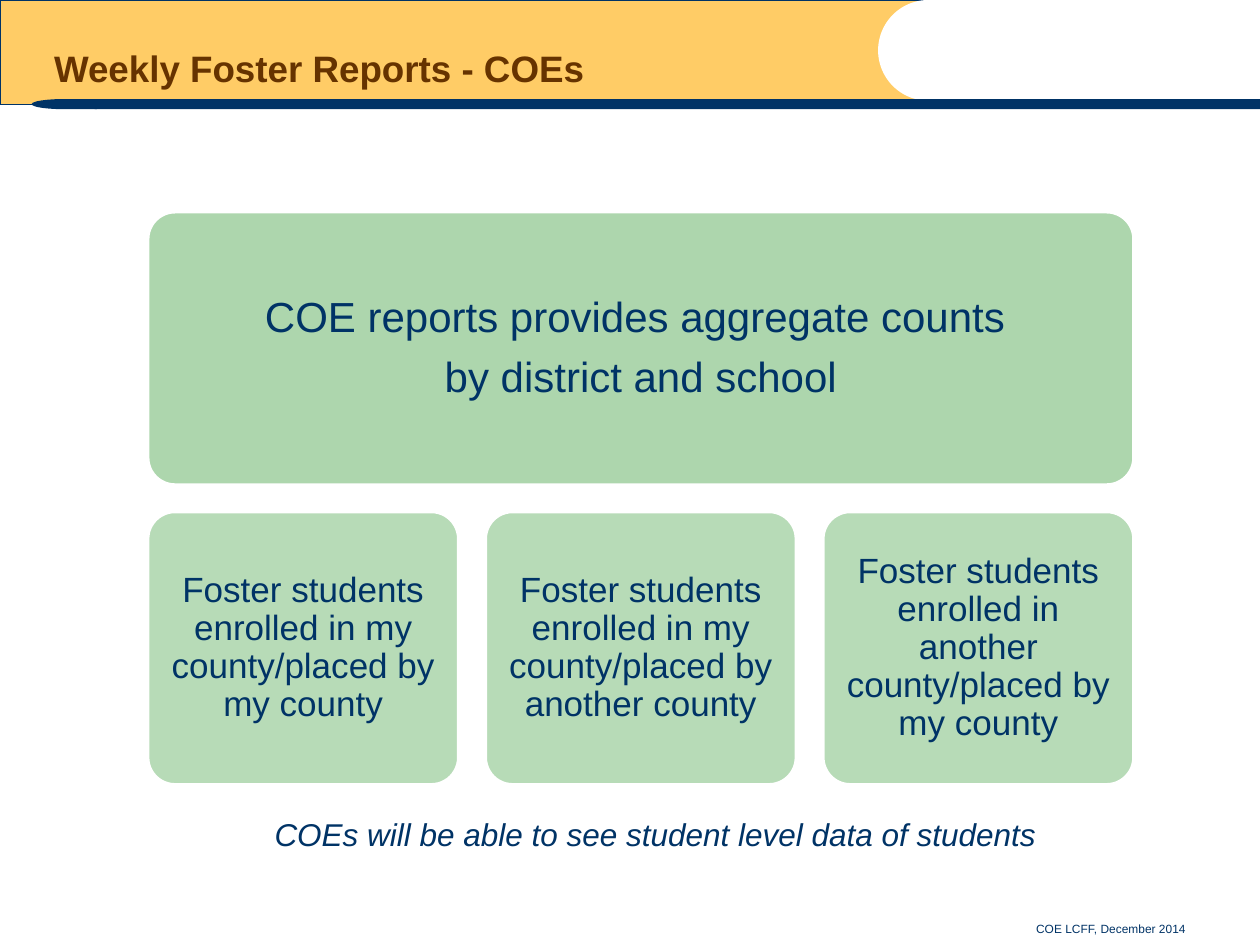
from lxml import etree
from pptx import Presentation
from pptx.dml.color import RGBColor
from pptx.enum.shapes import MSO_SHAPE
from pptx.enum.text import MSO_ANCHOR, PP_ALIGN
from pptx.oxml.ns import qn
from pptx.util import Pt

RECT, OVAL = MSO_SHAPE.RECTANGLE, MSO_SHAPE.OVAL
ROUND, DELAY = MSO_SHAPE.ROUNDED_RECTANGLE, MSO_SHAPE.FLOWCHART_DELAY
TOP, MID, LOW = MSO_ANCHOR.TOP, MSO_ANCHOR.MIDDLE, MSO_ANCHOR.BOTTOM
LEFT, MIDDLE, RIGHT = PP_ALIGN.LEFT, PP_ALIGN.CENTER, PP_ALIGN.RIGHT

COLORS = {"navy": "003366", "gold": "FFCC66", "brown": "663300",
          "green": "99CC99", "white": "FFFFFF"}
FONT = "Arial"
TITLE = "Weekly Foster Reports - COEs"
FOOTER = "COE LCFF, December 2014"
NOTE = "COEs will be able to see student level data of students"
SUMMARY = ["COE reports provides aggregate counts ", "by district and school"]
GROUPS = [
    "Foster students enrolled in my county/placed by my county",
    "Foster students enrolled in my county/placed by another county",
    "Foster students enrolled in another county/placed by my county",
]
BANDS = [
    (RECT, (0, 0, 527.8, 59.8), "gold", "navy", 0),
    (OVAL, (501.8, 0, 57.6, 57.6), "white", None, 0),
    (RECT, (54, 56.6, 666, 5.8), "navy", None, 0),
    (DELAY, (18, 56.6, 37.4, 5.8), "navy", None, 180),
]
X, Y, WIDE, HIGH = 84.4, 121, 563.6, 156.2
CELL, GAP = 177.8, 15.1
ROW = Y + HIGH + GAP

prs = Presentation()
prs.slide_width, prs.slide_height = Pt(720), Pt(540)
slide = prs.slides.add_slide(prs.slide_layouts[6])


def rgb(name):
    return RGBColor.from_string(COLORS[name])


def draw(kind, box, fill, line=None, width=0.75):
    shape = slide.shapes.add_shape(kind, *map(Pt, box))
    shape.shadow.inherit = False
    shape.fill.solid()
    shape.fill.fore_color.rgb = rgb(fill)
    if line:
        shape.line.color.rgb = rgb(line)
        shape.line.width = Pt(width)
    else:
        shape.line.fill.background()
    return shape


def write(shape, lines, size, anchor, align, color="navy", space=None,
          after=0, bold=False, italic=False):
    frame = shape.text_frame
    frame.word_wrap = True
    frame.vertical_anchor = anchor
    frame.text = "\n".join(lines)
    for para in frame.paragraphs:
        para.alignment = align
        para.line_spacing = space
        para.space_after = Pt(after)
        font = para.font
        font.name, font.size = FONT, Pt(size)
        font.bold, font.italic = bold, italic
        font.color.rgb = rgb(color)


def label(box, text, *style, **extra):
    write(slide.shapes.add_textbox(*map(Pt, box)), [text], *style, **extra)


def card(box, lines, size, inset, alpha):
    shape = draw(ROUND, box, "green", "white", 2)
    shape.adjustments[0] = 0.1
    tint = shape.fill._xPr.find(qn("a:solidFill"))[0]
    etree.SubElement(tint, qn("a:alpha"), val=str(alpha * 1000))
    frame = shape.text_frame
    frame.margin_left = frame.margin_right = Pt(inset)
    frame.margin_top = frame.margin_bottom = Pt(inset)
    write(shape, lines, size, MID, MIDDLE, space=0.9, after=size * 0.35)


for kind, box, fill, line, turn in BANDS:
    draw(kind, box, fill, line).rotation = turn

label((23.8, 13.7, 432, 41.8), TITLE, 21, LOW, LEFT, "brown",
      space=0.9, bold=True)
label((300.2, 519.1, 384.5, 19.4), FOOTER, 6.8, LOW, RIGHT)
card((X, Y, WIDE, HIGH), SUMMARY, 24, 7.2, 80)
for i, text in enumerate(GROUPS):
    card((X + i * (CELL + GAP), ROW, CELL, HIGH), [text], 20, 6, 70)
label((149.8, 462.2, 455.8, 51.1), NOTE, 18, TOP, LEFT, italic=True)

prs.save("out.pptx")
